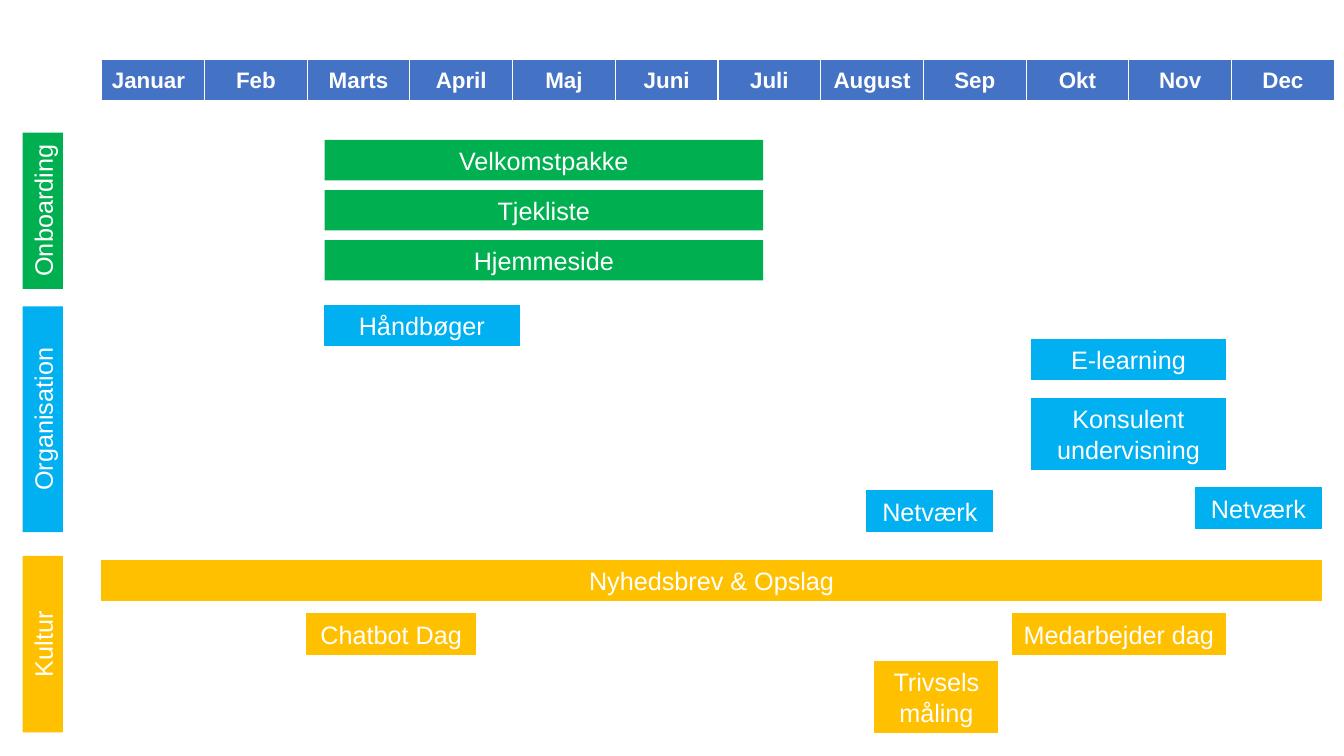
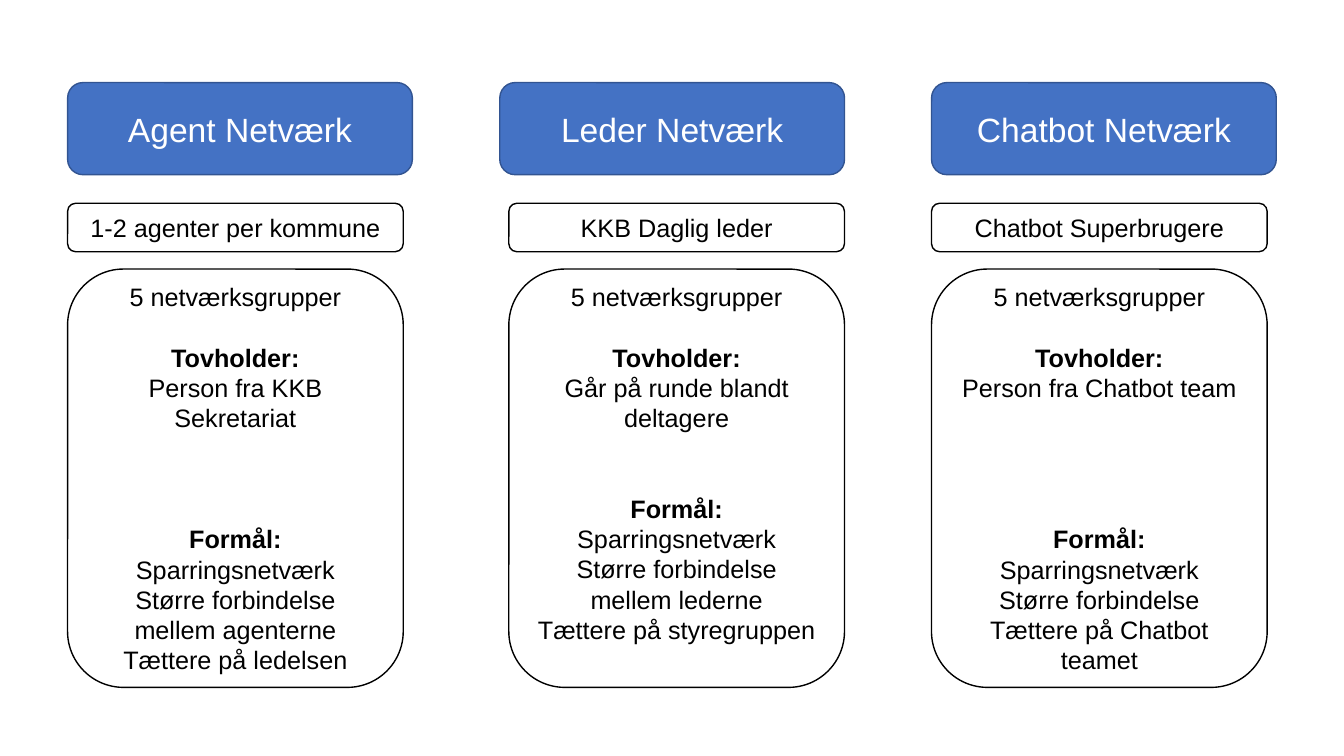
from lxml.etree import SubElement
from pptx import Presentation
from pptx.dml.color import RGBColor
from pptx.enum.shapes import MSO_SHAPE as Shape
from pptx.enum.text import MSO_ANCHOR as Anchor, PP_ALIGN as Align
from pptx.oxml.ns import qn
from pptx.util import Pt

# Shared look
FONT = "Arial"
WHITE, BLACK = "FFFFFF", "000000"
BLUE, DARK_BLUE = "4472C4", "325491"
GREEN, CYAN, AMBER = "00B050", "00B0F0", "FFC000"
LINE_FACTOR = 1.2
TEXT_SIZE = 18
LINE_HEIGHT = TEXT_SIZE * LINE_FACTOR

# Timeline content
MONTHS = ["Januar", "Feb", "Marts", "April", "Maj", "Juni",
          "Juli", "August", "Sep", "Okt", "Nov", "Dec"]
CALENDAR = dict(left=72.7, top=42.5, width=880.6, height=29.5)
BAR_HEIGHT, TALL_BAR_HEIGHT = 28.8, 51.1
LABEL_CENTER = 30.6
MARCH, OCTOBER = 231.84, 736.56

# Each track: name, colour, outline width, label centre, label length,
# bars as (text, left, top, width, height)
TRACKS = [
    ("Onboarding", GREEN, None, 150.5, 111.6, [
        (name, MARCH, 100 + 35.8 * row, 313.2, BAR_HEIGHT)
        for row, name in enumerate(["Velkomstpakke", "Tjekliste", "Hjemmeside"])]),
    ("Organisation", CYAN, 0.75, 299.5, 161.3, [
        ("Håndbøger", MARCH, 218.2, 139, BAR_HEIGHT),
        ("E-learning", OCTOBER, 242.6, 139, BAR_HEIGHT),
        ("Konsulent undervisning", OCTOBER, 284.4, 139, TALL_BAR_HEIGHT),
        ("Netværk", 619.2, 350.6, 90, BAR_HEIGHT),
        ("Netværk", 853.9, 348.5, 90, BAR_HEIGHT)]),
    ("Kultur", AMBER, 0.75, 460.1, 126, [
        ("Nyhedsbrev & Opslag", 72.7, 400.3, 871.2, BAR_HEIGHT),
        ("Chatbot Dag", 218.9, 438.5, 121, BAR_HEIGHT),
        ("Medarbejder dag", 722.9, 438.5, 152.64, BAR_HEIGHT),
        ("Trivselsmåling", 625, 472.3, 87.8, TALL_BAR_HEIGHT)]),
]

# Network content
GROUPS = "5 netværksgrupper"
OWNER, PURPOSE = "Tovholder:", "Formål:"
PURPOSE_START = "Sparringsnetværk"
HEADER_WIDTH, BOX_WIDTH = 246.24, 239.76
# "gap" and "spare" count empty lines before the purpose and at the bottom
NETWORKS = [
    dict(title="Agent Netværk", members="1-2 agenter per kommune",
         header_left=48.3, box_left=48.3, gap=3, spare=0,
         owner="Person fra KKB Sekretariat",
         purposes=["Større forbindelse mellem agenterne", "Tættere på ledelsen"]),
    dict(title="Leder Netværk", members="KKB Daglig leder",
         header_left=357, box_left=363.5, gap=2, spare=1,
         owner="Går på runde blandt deltagere",
         purposes=["Større forbindelse mellem lederne", "Tættere på styregruppen"]),
    dict(title="Chatbot Netværk", members="Chatbot Superbrugere",
         header_left=665.4, box_left=665.4, gap=4, spare=0,
         owner="Person fra Chatbot team",
         purposes=["Større forbindelse", "Tættere på Chatbot teamet"]),
]


def color(value):
    return RGBColor.from_string(value)


def set_all(target, values):
    for name, value in values.items():
        setattr(target, name, value)


def write(frame, lines, size=TEXT_SIZE, text_color=WHITE, align=Align.CENTER):
    """Write lines given as (text, bold, empty lines before)."""
    for index, (text, bold, gap) in enumerate(lines):
        paragraph = frame.paragraphs[0] if index == 0 else frame.add_paragraph()
        set_all(paragraph, dict(alignment=align, line_spacing=Pt(size * LINE_FACTOR),
                                space_before=Pt(gap * size * LINE_FACTOR)))
        run = paragraph.add_run()
        run.text = text
        set_all(run.font, dict(name=FONT, size=Pt(size), bold=bold))
        run.font.color.rgb = color(text_color)


def add_box(slide, kind, bounds, lines, fill=None, line=None, line_width=1, **text):
    shape = slide.shapes.add_shape(kind, *map(Pt, bounds))
    shape.shadow.inherit = False
    if fill:
        shape.fill.solid()
        shape.fill.fore_color.rgb = color(fill)
    else:
        shape.fill.background()
    if line:
        shape.line.color.rgb = color(line)
        shape.line.width = Pt(line_width)
    else:
        shape.line.fill.background()
    set_all(shape.text_frame, dict(word_wrap=True, vertical_anchor=Anchor.MIDDLE))
    write(shape.text_frame, lines, **text)
    return shape


def add_cell_borders(cell, sides, width=1):
    properties = cell._tc.get_or_add_tcPr()
    for side in sides:
        border = SubElement(properties, qn("a:ln" + side), w=str(Pt(width)))
        SubElement(SubElement(border, qn("a:solidFill")), qn("a:srgbClr"), val=WHITE)


def add_calendar(slide):
    bounds = {name: Pt(value) for name, value in CALENDAR.items()}
    table = slide.shapes.add_table(1, len(MONTHS), **bounds).table
    table.first_row = table.horz_banding = False
    for index, month in enumerate(MONTHS):
        table.columns[index].width = Pt(CALENDAR["width"] / len(MONTHS))
        cell = table.cell(0, index)
        add_cell_borders(cell, "LRT")
        cell.fill.solid()
        cell.fill.fore_color.rgb = color(BLUE)
        cell.vertical_anchor = Anchor.MIDDLE
        write(cell.text_frame, [(month, True, 0)], size=16,
              align=Align.CENTER if index else Align.LEFT)


def build_timeline(slide):
    add_calendar(slide)
    for name, fill, outline, center, length, bars in TRACKS:
        # Vertical track label
        bounds = (LABEL_CENTER - length / 2, center - BAR_HEIGHT / 2, length, BAR_HEIGHT)
        label = add_box(slide, Shape.RECTANGLE, bounds, [(name, False, 0)], fill)
        label.rotation = 270
        # Activities
        for text, *bounds in bars:
            add_box(slide, Shape.RECTANGLE, bounds, [(text, False, 0)], fill,
                    line=fill if outline else None, line_width=outline)


def build_networks(slide):
    for network in NETWORKS:
        left = network["box_left"]
        add_box(slide, Shape.ROUNDED_RECTANGLE,
                (network["header_left"], 59, HEADER_WIDTH, 65.8),
                [(network["title"], False, 0)], BLUE, DARK_BLUE, size=24)
        add_box(slide, Shape.ROUNDED_RECTANGLE, (left, 145.2, BOX_WIDTH, 34.6),
                [(network["members"], False, 0)], line=BLACK, text_color=BLACK)
        # Owner and purpose
        details = [(GROUPS, False, 0), (OWNER, True, 1), (network["owner"], False, 0),
                   (PURPOSE, True, network["gap"]), (PURPOSE_START, False, 0)]
        details += [(purpose, False, 0) for purpose in network["purposes"]]
        box = add_box(slide, Shape.ROUNDED_RECTANGLE, (left, 192.2, BOX_WIDTH, 298.8),
                      details, line=BLACK, text_color=BLACK)
        box.text_frame.margin_bottom = Pt(3.6 + network["spare"] * LINE_HEIGHT)


def main():
    presentation = Presentation()
    set_all(presentation, dict(slide_width=Pt(960), slide_height=Pt(540)))
    blank = presentation.slide_layouts[6]
    for build in (build_timeline, build_networks):
        build(presentation.slides.add_slide(blank))
    presentation.save("out.pptx")


if __name__ == "__main__":
    main()
